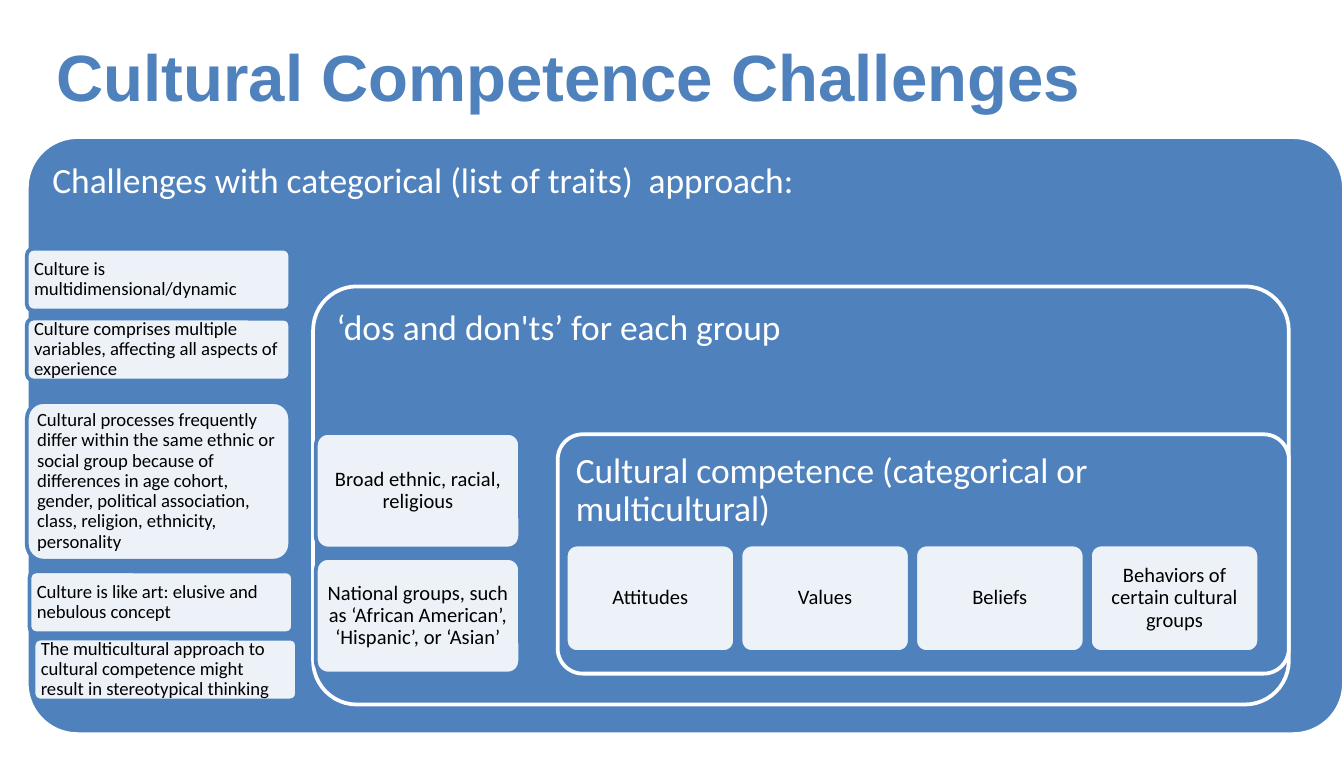
from pptx import Presentation
from pptx.dml.color import RGBColor
from pptx.enum.shapes import MSO_SHAPE
from pptx.enum.text import MSO_ANCHOR, MSO_AUTO_SIZE, PP_ALIGN
from pptx.oxml.ns import qn
from pptx.util import Inches, Pt
from lxml import etree

ROUNDED = MSO_SHAPE.ROUNDED_RECTANGLE
LEFT, CENTER = PP_ALIGN.LEFT, PP_ALIGN.CENTER
TOP, MIDDLE = MSO_ANCHOR.TOP, MSO_ANCHOR.MIDDLE

THEME = {
    "blue": RGBColor(0x4F, 0x81, 0xBD),
    "white": RGBColor(0xFF, 0xFF, 0xFF),
    "black": RGBColor(0x00, 0x00, 0x00),
    "title_font": "Arial", "body_font": "Calibri",
    "title_size": 35, "panel_size": 19, "challenge_size": 10, "group_size": 11,
    "line_width": 2, "card_opacity": 90,
}

# Content: text with its place where the layout is irregular (inches)
TITLE = "Cultural Competence Challenges"
PANELS = [  # heading, (left, top, width, height), corner
    ("Challenges with categorical (list of traits)  approach:", (0.2, 1.02, 9.8, 4.44), 0.085),
    ("‘dos and don'ts’ for each group", (2.33, 2.13, 7.26, 3.11), 0.105),
    ("Cultural competence (categorical or multicultural)", (4.15, 3.23, 5.44, 1.78), 0.105),
]
CHALLENGES = [  # text, left, top, height
    ("Culture is multidimensional/dynamic", 0.2, 1.85, 0.46),
    ("Culture comprises multiple variables, affecting all aspects of experience", 0.2, 2.37, 0.46),
    ("Cultural processes frequently differ within the same ethnic or social group "
     "because of differences in age cohort, gender, political association, class, "
     "religion, ethnicity, personality", 0.2, 2.99, 1.18),
    ("Culture is like art: elusive and nebulous concept", 0.22, 4.25, 0.46),
    ("The multicultural approach to cultural competence might result in "
     "stereotypical thinking", 0.25, 4.75, 0.46),
]
GROUPS = ["Broad ethnic, racial, religious",
          "National groups, such as ‘African American’, ‘Hispanic’, or ‘Asian’"]
TRAITS = ["Attitudes", "Values", "Beliefs", "Behaviors of certain cultural groups"]


def style_text(frame, text, font, size, color, align, anchor, bold=False):
    frame.word_wrap = True
    frame.auto_size = MSO_AUTO_SIZE.NONE
    frame.vertical_anchor = anchor
    frame.text = text
    para = frame.paragraphs[0]
    para.alignment = align
    para.font.name, para.font.size, para.font.bold = font, Pt(size), bold
    para.font.color.rgb = color
    return para


def add_box(page, place, corner, fill, line, text, size, color, align, anchor, inset):
    box = page.shapes.add_shape(ROUNDED, *(Inches(value) for value in place))
    box.adjustments[0] = corner
    box.shadow.inherit = False
    box.fill.solid()
    box.fill.fore_color.rgb = fill
    box.line.color.rgb = line
    box.line.width = Pt(THEME["line_width"])
    frame = box.text_frame
    frame.margin_left = frame.margin_right = Inches(inset)
    frame.margin_top = frame.margin_bottom = Inches(inset)
    para = style_text(frame, text, THEME["body_font"], size, color, align, anchor)
    para.line_spacing = 0.9
    return box


def add_panel(page, heading, place, corner):
    add_box(page, place, corner, THEME["blue"], THEME["white"], heading,
            THEME["panel_size"], THEME["white"], LEFT, TOP, 0.08)


def add_card(page, place, text, size, align, inset):
    card = add_box(page, place, 0.105, THEME["white"], THEME["blue"], text,
                   size, THEME["black"], align, MIDDLE, inset)
    color = card.fill._xPr.find(qn("a:solidFill"))[0]
    etree.SubElement(color, qn("a:alpha")).set("val", str(THEME["card_opacity"] * 1000))


deck = Presentation()
deck.slide_width, deck.slide_height = Inches(10), Inches(5.63)
page = deck.slides.add_slide(deck.slide_layouts[5])

# Title
title = page.shapes.title
title.left, title.top = Inches(0.32), Inches(0.09)
title.width, title.height = Inches(9), Inches(0.94)
style_text(title.text_frame, TITLE, THEME["title_font"], THEME["title_size"],
           THEME["blue"], LEFT, MIDDLE, bold=True)

# Outer panel with the column of challenges
add_panel(page, *PANELS[0])
for text, left, top, height in CHALLENGES:
    add_card(page, (left, top, 1.96, height), text, THEME["challenge_size"], LEFT, 0.04)

# Middle panel with stacked groups
add_panel(page, *PANELS[1])
for row, text in enumerate(GROUPS):
    add_card(page, (2.35, 3.22 + row * 0.93, 1.52, 0.86), text,
             THEME["group_size"], CENTER, 0.05)

# Inner panel with a row of traits
add_panel(page, *PANELS[2])
for column, text in enumerate(TRAITS):
    add_card(page, (4.21 + column * 1.3, 4.05, 1.26, 0.8), text,
             THEME["group_size"], CENTER, 0.05)

deck.save("out.pptx")
